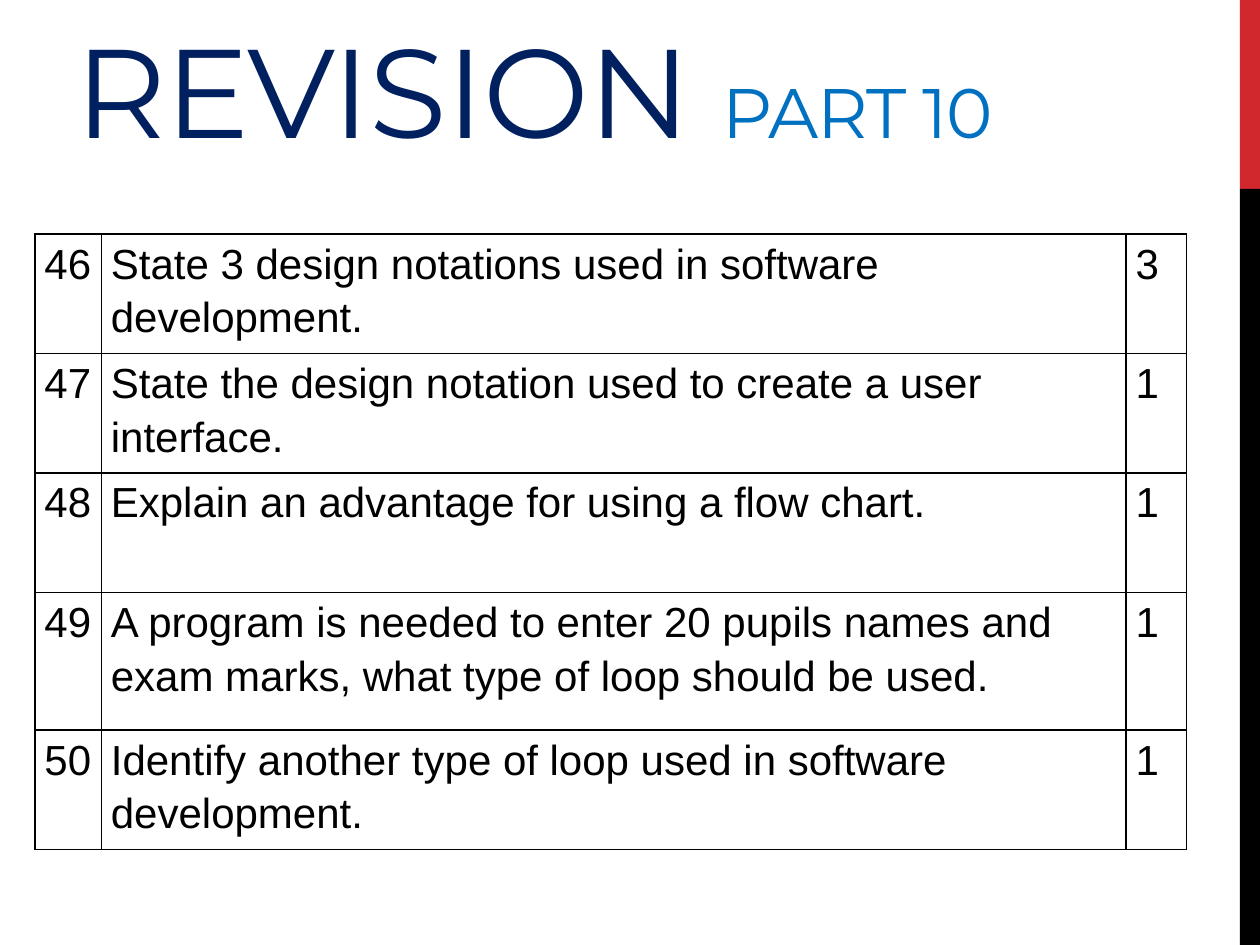
from lxml.etree import SubElement
from pptx import Presentation
from pptx.dml.color import RGBColor
from pptx.enum.shapes import MSO_SHAPE
from pptx.enum.text import MSO_ANCHOR, MSO_AUTO_SIZE, PP_ALIGN
from pptx.oxml.ns import qn
from pptx.util import Pt

# Content
HEADING = [("REVISION ", 72, "002060"), ("PART 10", 40, "0070C0")]
QUESTIONS = [
    ("46", "State 3 design notations used in software development.", "3"),
    ("47", "State the design notation used to create a user interface.", "1"),
    ("48", "Explain an advantage for using a flow chart.", "1"),
    ("49", "A program is needed to enter 20 pupils names and exam marks, "
           "what type of loop should be used.", "1"),
    ("50", "Identify another type of loop used in software development.", "1"),
]

# Layout, in points
WIDTH, HEIGHT = 720, 540
STRIPE_WIDTH = 11.5
STRIPES = [("D1282E", 108), ("000000", HEIGHT - 108)]
COLUMN_WIDTHS = [38, 585.5, 34.5]
ROW_HEIGHTS = [68.25, 68.25, 68.25, 78.75, 68.25]
TABLE_LEFT, TABLE_TOP = 20, 133.75


def colour(hex_code):
    return RGBColor.from_string(hex_code)


def format_run(run, font_name, size, hex_code):
    run.font.name = font_name
    run.font.size = Pt(size)
    run.font.color.rgb = colour(hex_code)


def add_borders(cell):
    properties = cell._tc.get_or_add_tcPr()
    for side in ("a:lnL", "a:lnR", "a:lnT", "a:lnB"):
        border = SubElement(properties, qn(side), w=str(Pt(1)))
        fill = SubElement(border, qn("a:solidFill"))
        SubElement(fill, qn("a:srgbClr"), val="000000")


def format_cell(cell, wording):
    cell.text_frame.text = wording
    cell.margin_left = cell.margin_right = Pt(5.4)
    cell.margin_top = cell.margin_bottom = Pt(0)
    paragraph = cell.text_frame.paragraphs[0]
    paragraph.line_spacing = 1.15
    format_run(paragraph.runs[0], "Arial", 24, "000000")
    add_borders(cell)
    cell.fill.background()


def add_stripes(slide):
    top = 0
    for hex_code, height in STRIPES:
        stripe = slide.shapes.add_shape(
            MSO_SHAPE.RECTANGLE, Pt(WIDTH - STRIPE_WIDTH), Pt(top),
            Pt(STRIPE_WIDTH), Pt(height))
        stripe.shadow.inherit = False
        stripe.fill.solid()
        stripe.fill.fore_color.rgb = colour(hex_code)
        stripe.line.fill.background()
        top += height


def add_heading(slide):
    title = slide.shapes.title
    title.left, title.top, title.width, title.height = map(Pt, (36, 3.6, 618.5, 93.6))
    frame = title.text_frame
    frame.word_wrap = True
    frame.auto_size = MSO_AUTO_SIZE.NONE
    frame.vertical_anchor = MSO_ANCHOR.BOTTOM
    paragraph = frame.paragraphs[0]
    paragraph.alignment = PP_ALIGN.LEFT
    for wording, size, hex_code in HEADING:
        run = paragraph.add_run()
        run.text = wording
        format_run(run, "Montserrat", size, hex_code)
        run.font._element.set("spc", "-60")


def add_questions(slide):
    table = slide.shapes.add_table(
        len(QUESTIONS), len(COLUMN_WIDTHS), Pt(TABLE_LEFT), Pt(TABLE_TOP),
        Pt(sum(COLUMN_WIDTHS)), Pt(sum(ROW_HEIGHTS))).table
    table.first_row = table.horz_banding = False
    for column, width in zip(table.columns, COLUMN_WIDTHS):
        column.width = Pt(width)
    for row, height, question in zip(table.rows, ROW_HEIGHTS, QUESTIONS):
        row.height = Pt(height)
        for cell, wording in zip(row.cells, question):
            format_cell(cell, wording)


def main():
    presentation = Presentation()
    presentation.slide_width, presentation.slide_height = Pt(WIDTH), Pt(HEIGHT)
    slide = presentation.slides.add_slide(presentation.slide_layouts[5])
    add_stripes(slide)
    add_heading(slide)
    add_questions(slide)
    presentation.save("out.pptx")


if __name__ == "__main__":
    main()
